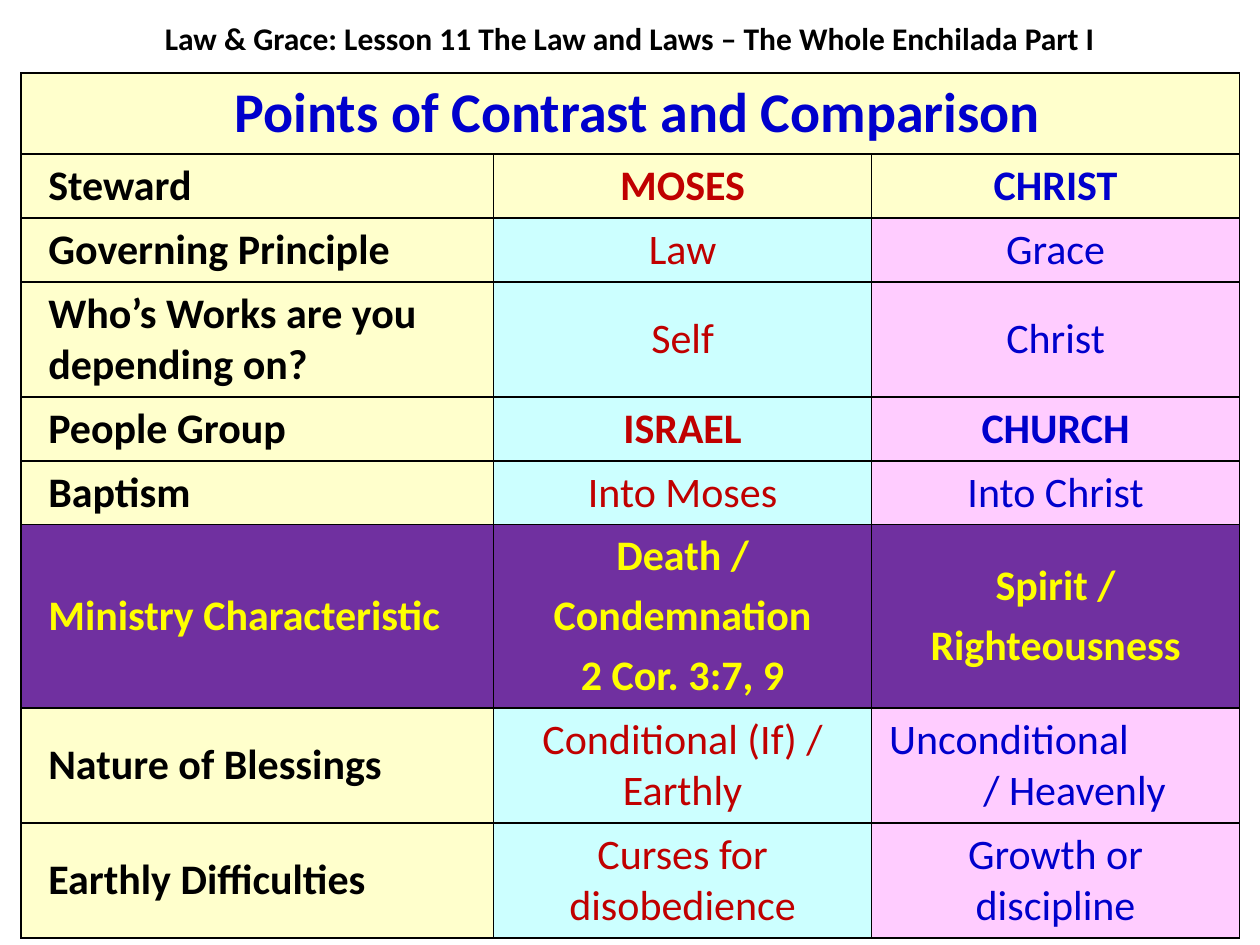
from lxml import etree
from pptx import Presentation
from pptx import util as u
from pptx.dml.color import RGBColor
from pptx.enum import text
from pptx.oxml import ns

BLACK = RGBColor(0x00, 0x00, 0x00)
RED = RGBColor(0xC0, 0x00, 0x00)
BLUE = RGBColor(0x00, 0x00, 0xCC)
YELLOW = RGBColor(0xFF, 0xFF, 0x00)
CREAM = RGBColor(0xFF, 0xFF, 0xCC)
AQUA = RGBColor(0xCC, 0xFF, 0xFF)
PINK = RGBColor(0xFF, 0xCC, 0xFF)
PURPLE = RGBColor(0x70, 0x30, 0xA0)

LEFT, CENTER = text.PP_ALIGN.LEFT, text.PP_ALIGN.CENTER
LABEL_INDENT = (u.Cm(0.3), 0)
HANGING = (u.Cm(2), u.Cm(-1.9))  # second line set in from the first

TITLE = "Points of Contrast and Comparison"
COLUMN_WIDTHS = (9.53, 7.62, 7.42)
ROW_HEIGHT = 1.27
PLAIN_FILLS = (CREAM, AQUA, PINK)
# Label, law side, grace side, bold values, cell fills
ROWS = [
    ("Steward", "MOSES", "CHRIST", True, (CREAM,) * 3),
    ("Governing Principle", "Law", "Grace", False, PLAIN_FILLS),
    ("Who’s Works are you depending on?", "Self", "Christ", False, PLAIN_FILLS),
    ("People Group", "ISRAEL", "CHURCH", True, PLAIN_FILLS),
    ("Baptism", "Into Moses", "Into Christ", False, PLAIN_FILLS),
    ("Ministry Characteristic", "Death /\nCondemnation\n2 Cor. 3:7, 9",
     "Spirit /\nRighteousness", True, (PURPLE,) * 3),
    ("Nature of Blessings", "Conditional (If) / Earthly",
     "Unconditional\v/ Heavenly", False, PLAIN_FILLS),
    ("Earthly Difficulties", "Curses for disobedience",
     "Growth or discipline", False, PLAIN_FILLS),
]


def write(frame, words, color, size=24, bold=True, align=CENTER, indent=None):
    """Fill a text frame with one paragraph for each line of words."""
    style = {"name": "Calibri", "size": u.Pt(size), "bold": bold}
    for number, line in enumerate(words.split("\n")):
        para = frame.add_paragraph() if number else frame.paragraphs[0]
        para.text = line
        para.alignment = align
        if number:
            para.space_before = u.Pt(size * 0.2)
        if indent:
            properties = para._p.get_or_add_pPr()
            for name, length in zip(("marL", "indent"), indent):
                properties.set(name, str(int(length)))
        for span in para.runs:
            for name, value in style.items():
                setattr(span.font, name, value)
            span.font.color.rgb = color


def add_borders(cell):
    properties = cell._tc.get_or_add_tcPr()
    for position, side in enumerate(("lnL", "lnR", "lnT", "lnB")):
        line = etree.Element(ns.qn("a:" + side), w=str(u.Pt(1)))
        fill = etree.SubElement(line, ns.qn("a:solidFill"))
        etree.SubElement(fill, ns.qn("a:srgbClr"), val=str(BLACK))
        properties.insert(position, line)


def fill_cell(cell, words, fill, color, **style):
    cell.fill.solid()
    cell.fill.fore_color.rgb = fill
    cell.vertical_anchor = text.MSO_ANCHOR.MIDDLE
    write(cell.text_frame, words, color, **style)


def add_header(page):
    box = page.shapes.add_textbox(u.Cm(2.96), u.Cm(0.25), u.Cm(19.48), u.Cm(1.03))
    box.text_frame.word_wrap = True
    write(box.text_frame,
          "Law & Grace: Lesson 11 The Law and Laws – The Whole Enchilada Part I",
          BLACK, size=18)


def add_comparison(page):
    row_count = len(ROWS) + 1
    table = page.shapes.add_table(
        row_count, len(COLUMN_WIDTHS), u.Cm(0.42), u.Cm(1.47),
        u.Cm(sum(COLUMN_WIDTHS)), u.Cm(ROW_HEIGHT * row_count)).table
    table.first_row = table.horz_banding = False
    for column, width in zip(table.columns, COLUMN_WIDTHS):
        column.width = u.Cm(width)
    for row in table.rows:
        row.height = u.Cm(ROW_HEIGHT)

    # Title across all columns
    table.cell(0, 0).merge(table.cell(0, len(COLUMN_WIDTHS) - 1))
    fill_cell(table.cell(0, 0), TITLE, CREAM, BLUE, size=32, indent=LABEL_INDENT)

    # Comparison rows
    for index, (label, law, grace, bold, fills) in enumerate(ROWS, 1):
        colors = (YELLOW,) * 3 if PURPLE in fills else (BLACK, RED, BLUE)
        styles = [{"align": LEFT, "indent": LABEL_INDENT}, {"bold": bold}, {"bold": bold}]
        if "\v" in grace:
            styles[2].update(align=LEFT, indent=HANGING)
        for column, words in enumerate((label, law, grace)):
            fill_cell(table.cell(index, column), words, fills[column],
                      colors[column], **styles[column])

    for cell in table.iter_cells():
        add_borders(cell)


def main():
    deck = Presentation()
    deck.slide_width, deck.slide_height = u.Cm(25.4), u.Cm(19.05)
    page = deck.slides.add_slide(deck.slide_layouts[6])
    add_comparison(page)
    add_header(page)
    deck.save("out.pptx")


if __name__ == "__main__":
    main()
